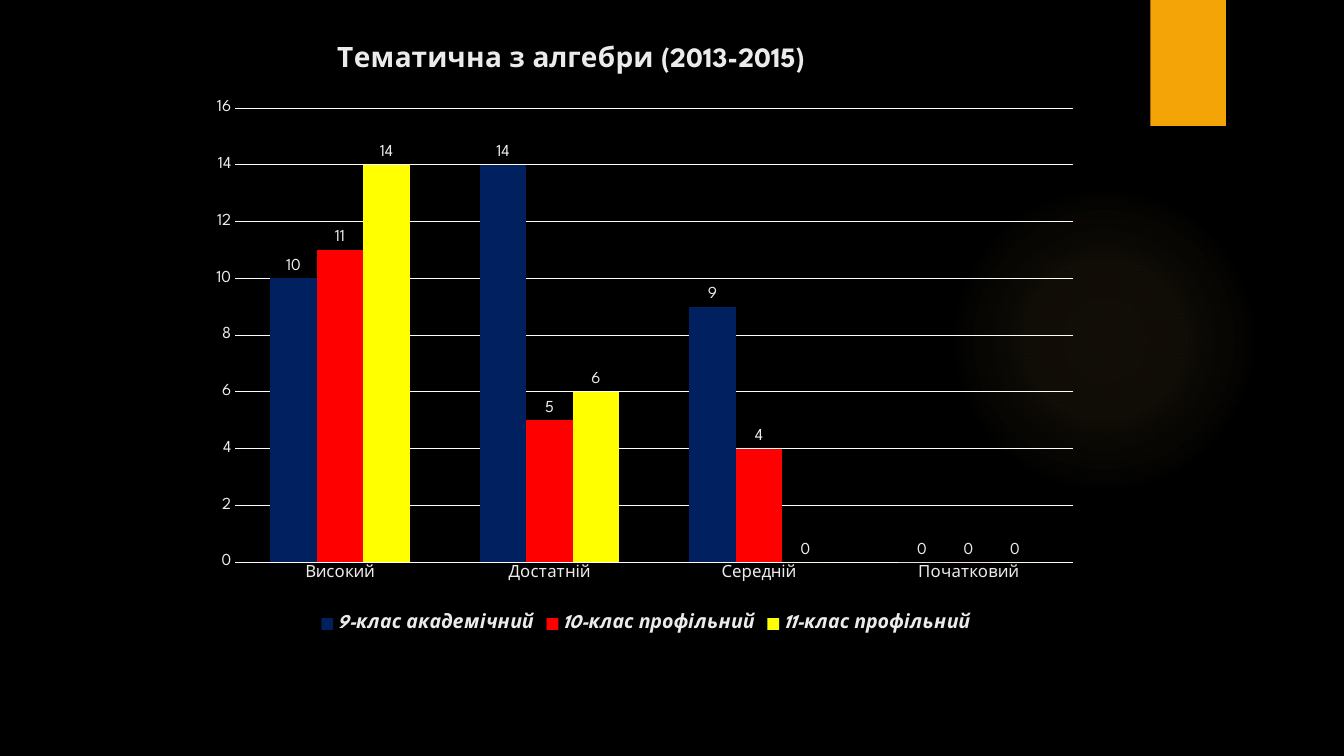
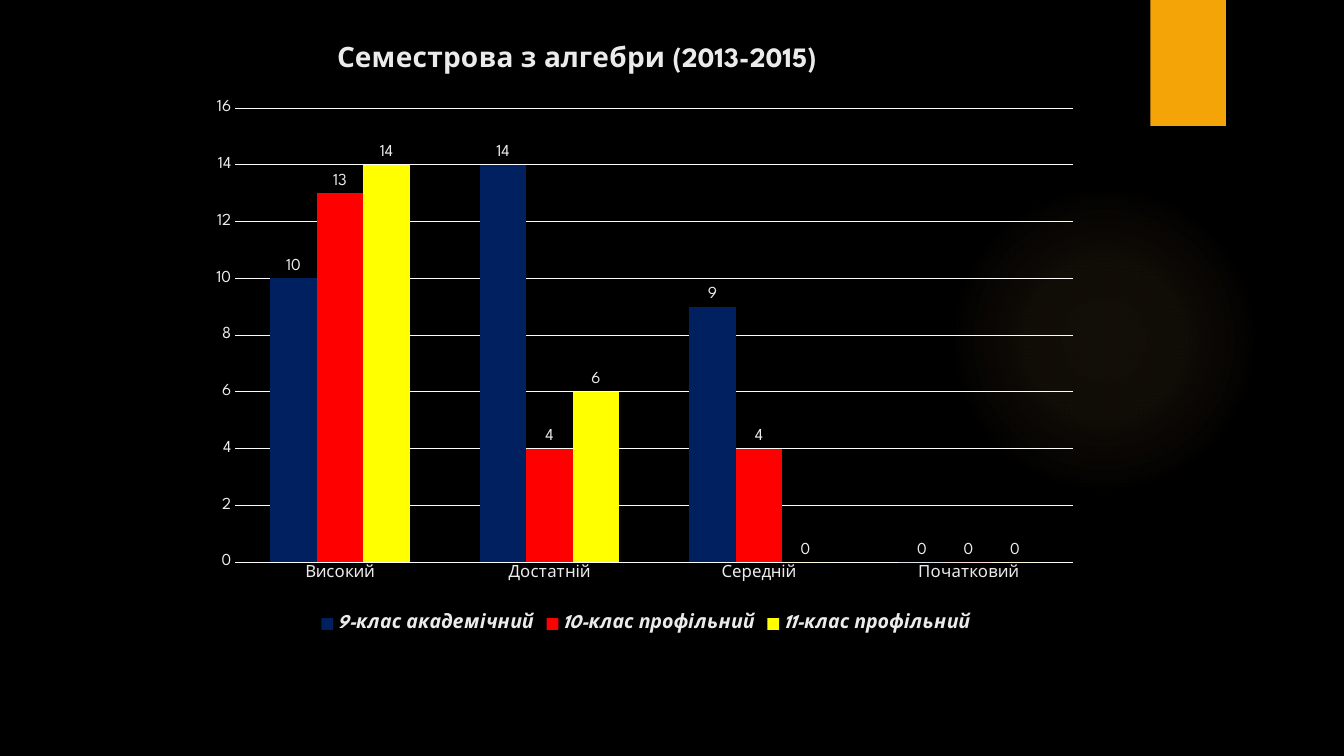
from lxml import etree
from pptx import Presentation
from pptx import util as u
from pptx.chart.data import CategoryChartData
from pptx.dml.color import RGBColor
from pptx.enum import chart as charts, shapes
from pptx.oxml import parse_xml
from pptx.oxml.ns import nsdecls, qn

LEVELS = ["Високий", "Достатній", "Середній", "Початковий"]
CLASSES = [
    ("9-клас академічний", "002060"),
    ("10-клас профільний", "FF0000"),
    ("11-клас профільний", "FFFF00"),
]
RESULTS = [
    ("Тематична з алгебри (2013-2015)",
     [(10, 14, 9, 0), (11, 5, 4, 0), (14, 6, 0, 0)]),
    ("Семестрова з алгебри (2013-2015)",
     [(10, 14, 9, 0), (13, 4, 4, 0), (14, 6, 0, 0)]),
]


def rgb(color):
    return RGBColor.from_string(color)


def place(parent, index, **fractions):
    """Insert a manual layout, in fractions of the chart, into a chart part."""
    for old in parent.findall(qn("c:layout")):
        parent.remove(old)
    layout = parse_xml(f'<c:layout {nsdecls("c")}><c:manualLayout/></c:layout>')
    for tag, value in fractions.items():
        etree.SubElement(layout[0], qn(f"c:{tag}")).set("val", str(value))
    parent.insert(index, layout)


class ResultsDeck:
    FONT = "League Spartan"
    BACKGROUND, ACCENT, GLOW = "000000", "F5A408", "FAC96A"
    TEXT, GRID = "EBEBEB", "FCFCFC"

    def __init__(self):
        self.deck = Presentation()
        self.deck.slide_width = u.Inches(13.33)
        self.deck.slide_height = u.Inches(7.5)
        self.layout = self.deck.slide_layouts[6]
        background = self.deck.slide_master.background.fill
        background.solid()
        background.fore_color.rgb = rgb(self.BACKGROUND)
        self.page = None

    def new_page(self):
        self.page = self.deck.slides.add_slide(self.layout)

    def shape(self, kind, left, top, width, height):
        shape = self.page.shapes.add_shape(
            kind, *map(u.Inches, (left, top, width, height)))
        shape.shadow.inherit = False
        shape.line.fill.background()
        return shape

    def glow(self):
        """Draw a round spot of light that fades towards its edge."""
        spot = self.shape(shapes.MSO_SHAPE.OVAL, 9.41, 1.83, 3.08, 3.08)
        stops = "".join(
            f'<a:gs pos="{place_percent * 1000}"><a:srgbClr val="{self.GLOW}">'
            f'<a:alpha val="{alpha * 1000}"/></a:srgbClr></a:gs>'
            for place_percent, alpha in ((0, 7), (36, 6), (69, 0)))
        gradient = parse_xml(
            f'<a:gradFill {nsdecls("a")} rotWithShape="1"><a:gsLst>{stops}</a:gsLst>'
            '<a:path path="circle"><a:fillToRect l="50000" t="50000" r="50000" '
            'b="50000"/></a:path></a:gradFill>')
        spot._element.spPr.find(qn("a:prstGeom")).addnext(gradient)

    def tab(self):
        box = self.shape(shapes.MSO_SHAPE.RECTANGLE, 11.41, 0, 0.75, 1.25)
        box.fill.solid()
        box.fill.fore_color.rgb = rgb(self.ACCENT)

    def style_font(self, font, size, bold=False, italic=False):
        font.name = self.FONT
        font.size = u.Pt(size)
        font.bold = bold
        font.italic = italic
        font.color.rgb = rgb(self.TEXT)

    def style_line(self, line):
        line.color.rgb = rgb(self.GRID)
        line.width = u.Pt(0.75)

    def style_axes(self, chart):
        for axis in (chart.category_axis, chart.value_axis):
            axis.major_tick_mark = axis.minor_tick_mark = charts.XL_TICK_MARK.NONE
            self.style_font(axis.tick_labels.font, 12)
        self.style_line(chart.category_axis.format.line)
        values = chart.value_axis
        values.minimum_scale, values.maximum_scale, values.major_unit = 0, 16, 2
        values.format.line.fill.background()
        self.style_line(values.major_gridlines.format.line)

    def style_columns(self, plot):
        plot.gap_width = 150
        plot.overlap = 0
        plot.vary_by_categories = False
        for series, (_, color) in zip(plot.series, CLASSES):
            series.format.fill.solid()
            series.format.fill.fore_color.rgb = rgb(color)
            labels = series.data_labels
            labels.show_value = True
            labels.position = charts.XL_LABEL_POSITION.OUTSIDE_END
            self.style_font(labels.font, 12)

    def chart_title(self, chart, title):
        chart.has_title = True
        para = chart.chart_title.text_frame.paragraphs[0]
        span = para.add_run()
        span.text = title
        self.style_font(span.font, 20, bold=True)
        place(chart.chart_title._element, 1,
              xMode="edge", yMode="edge", x=0.15, y=0)

    def column_chart(self, title, results):
        data = CategoryChartData()
        data.categories = LEVELS
        for (name, _), values in zip(CLASSES, results):
            data.add_series(name, values)
        chart = self.page.shapes.add_chart(
            charts.XL_CHART_TYPE.COLUMN_CLUSTERED,
            *map(u.Inches, (1.96, 0.39, 8.89, 5.93)), data).chart
        self.style_font(chart.font, 10)
        self.chart_title(chart, title)
        self.style_axes(chart)
        self.style_columns(chart.plots[0])
        chart.has_legend = True
        chart.legend.position = charts.XL_LEGEND_POSITION.BOTTOM
        chart.legend.include_in_layout = False
        self.style_font(chart.legend.font, 14, bold=True, italic=True)
        plot_area = chart._chartSpace.chart.plotArea
        place(plot_area, 0, layoutTarget="inner", xMode="edge", yMode="edge",
              x=0.042, y=0.115, w=0.935, h=0.76)


def main():
    slides = ResultsDeck()
    for title, results in RESULTS:
        slides.new_page()
        slides.glow()
        slides.tab()
        slides.column_chart(title, results)
    slides.deck.save("out.pptx")


if __name__ == "__main__":
    main()
